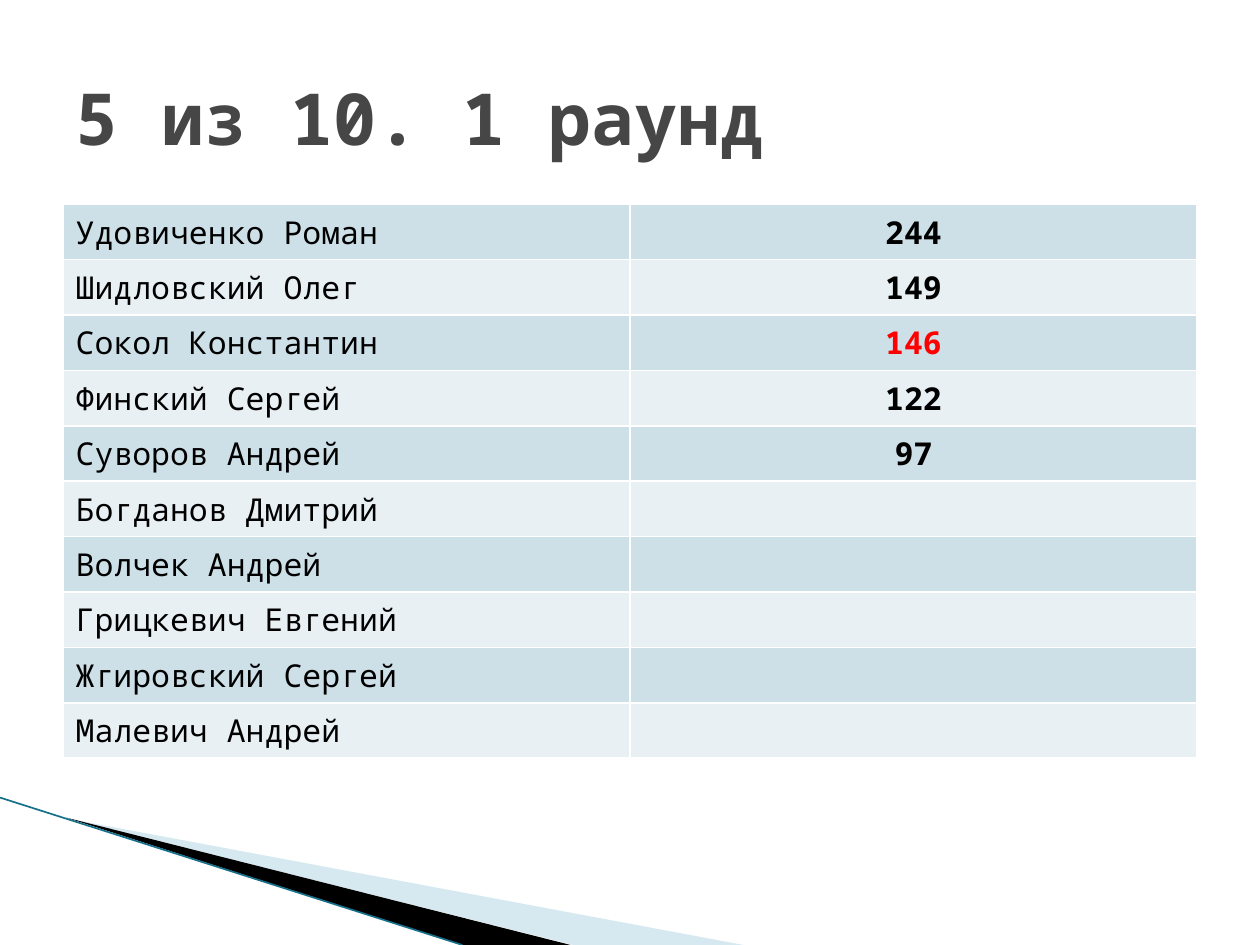
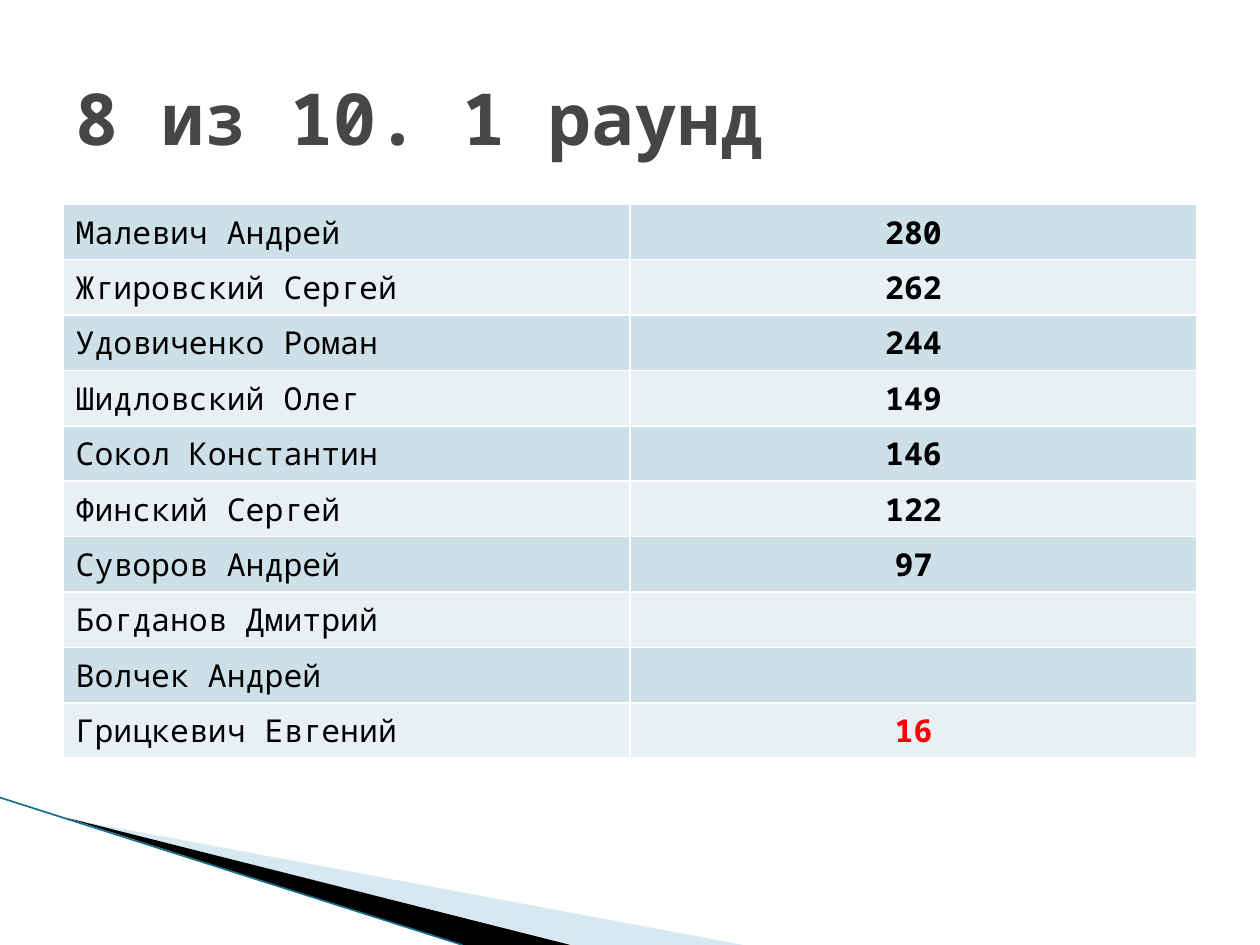
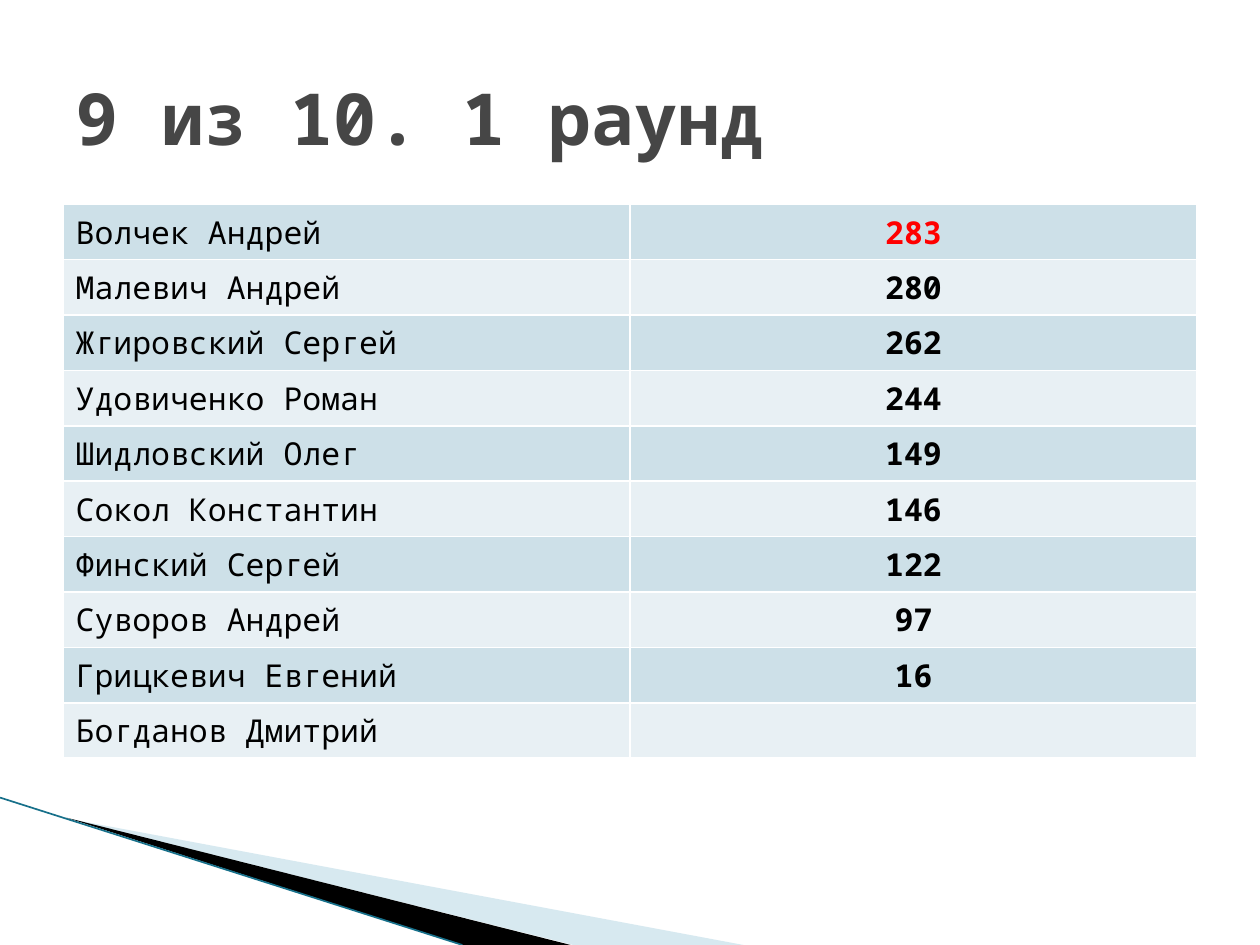
from dataclasses import dataclass

from lxml import etree
from pptx import Presentation
from pptx.dml.color import RGBColor
from pptx.enum.shapes import MSO_CONNECTOR
from pptx.enum.text import MSO_ANCHOR, PP_ALIGN
from pptx.oxml.ns import qn
from pptx.util import Inches, Pt

LEFT, CENTER = PP_ALIGN.LEFT, PP_ALIGN.CENTER
MIDDLE = MSO_ANCHOR.MIDDLE
STRAIGHT = MSO_CONNECTOR.STRAIGHT


@dataclass(frozen=True)
class Theme:
    font: str = "Noto Sans Mono"
    head: str = "464646"
    ink: str = "000000"
    hot: str = "FF0000"
    edge: str = "FFFFFF"
    pale: str = "A0CBDC"
    line: str = "17708A"
    bands: tuple = ("CDE0E8", "E8F0F4")
    big: int = 41
    body: int = 18


def write(frame, text, *, font, size, color, bold=False, align=LEFT):
    para = frame.paragraphs[0]
    para.alignment = align
    run = para.add_run()
    run.text = text
    run.font.name = font
    run.font.size = Pt(size)
    run.font.bold = bold
    run.font.color.rgb = RGBColor.from_string(color)


def paint(fill, color):
    fill.solid()
    fill.fore_color.rgb = RGBColor.from_string(color)


def border(cell, color, width):
    props = cell._tc.get_or_add_tcPr()
    for side in ("a:lnL", "a:lnR", "a:lnT", "a:lnB"):
        line = etree.SubElement(props, qn(side), w=str(Pt(width)))
        fill = etree.SubElement(line, qn("a:solidFill"))
        etree.SubElement(fill, qn("a:srgbClr"), val=color)


class Deck:
    def __init__(self, theme):
        self.theme = theme
        self.file = Presentation()
        self.file.slide_width = Inches(10)
        self.file.slide_height = Inches(7.5)
        self.slide = None

    def start(self):
        self.slide = self.file.slides.add_slide(self.file.slide_layouts[6])
        self.wedge([(0.55, 6.5), (5.9, 7.5), (4.55, 7.5)], self.theme.pale, 42)
        self.wedge([(0.53, 6.49), (4.53, 7.5), (3.67, 7.5)], self.theme.ink)
        self.stroke((0, 6.33), (3.67, 7.5), self.theme.line, 0.95)

    def wedge(self, points, color, alpha=100):
        spots = [(Inches(x), Inches(y)) for x, y in points]
        form = self.slide.shapes.build_freeform(*spots[0])
        form.add_line_segments(spots[1:])
        shape = form.convert_to_shape()
        shape.shadow.inherit = False
        shape.line.fill.background()
        paint(shape.fill, color)
        if alpha < 100:
            tint = shape._element.spPr.find(qn("a:solidFill"))[0]
            etree.SubElement(tint, qn("a:alpha"), val=str(alpha * 1000))

    def stroke(self, start, end, color, width):
        ends = [Inches(n) for n in (*start, *end)]
        line = self.slide.shapes.add_connector(STRAIGHT, *ends)
        line.line.color.rgb = RGBColor.from_string(color)
        line.line.width = Pt(width)
        etree.SubElement(line._element.spPr, qn("a:effectLst"))

    def title(self, text):
        box = self.slide.shapes.add_textbox(
            Inches(0.5), Inches(0.3), Inches(9), Inches(1.25))
        frame = box.text_frame
        frame.word_wrap = True
        frame.vertical_anchor = MIDDLE
        write(frame, text, font=self.theme.font, size=self.theme.big,
              color=self.theme.head, bold=True)

    def table(self, rows, fresh):
        theme = self.theme
        grid = self.slide.shapes.add_table(
            len(rows), 2, Inches(0.5), Inches(1.62),
            Inches(9), Inches(0.44 * len(rows))).table
        grid.first_row = grid.horz_banding = False
        for i, (name, score) in enumerate(rows):
            for j, text in enumerate((name, score)):
                cell = grid.cell(i, j)
                border(cell, theme.edge, 1)
                paint(cell.fill, theme.bands[i % 2])
                if text:
                    write(cell.text_frame, text, font=theme.font, size=theme.body,
                          color=theme.hot if text == fresh else theme.ink,
                          bold=j == 1, align=CENTER if j else LEFT)


FIVE = [
    ("Удовиченко Роман", "244"),
    ("Шидловский Олег", "149"),
    ("Сокол Константин", "146"),
    ("Финский Сергей", "122"),
    ("Суворов Андрей", "97"),
]
LEAD = [("Малевич Андрей", "280"), ("Жгировский Сергей", "262")]
LAST = ("Грицкевич Евгений", "16")
TOP = ("Волчек Андрей", "283")
OPEN = ("Богданов Дмитрий", "")


def blank(*rows):
    return [(name, "") for name, score in rows]


ROUNDS = [
    (5, FIVE + blank(OPEN, TOP, LAST, *reversed(LEAD)), "146"),
    (8, LEAD + FIVE + blank(OPEN, TOP) + [LAST], "16"),
    (9, [TOP] + LEAD + FIVE + [LAST, OPEN], "283"),
]


def main():
    deck = Deck(Theme())
    for count, rows, fresh in ROUNDS:
        deck.start()
        deck.title(f"{count} из 10. 1 раунд")
        deck.table(rows, fresh)
    deck.file.save("out.pptx")


if __name__ == "__main__":
    main()
